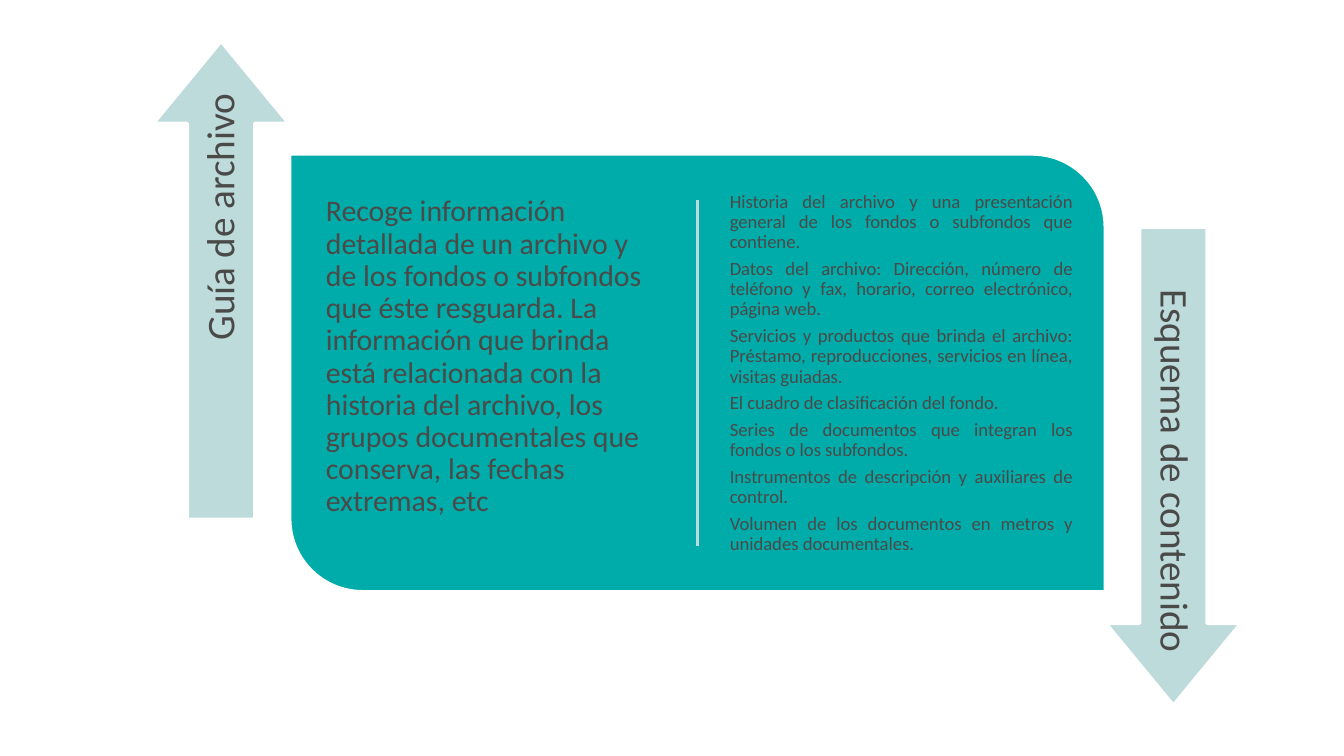
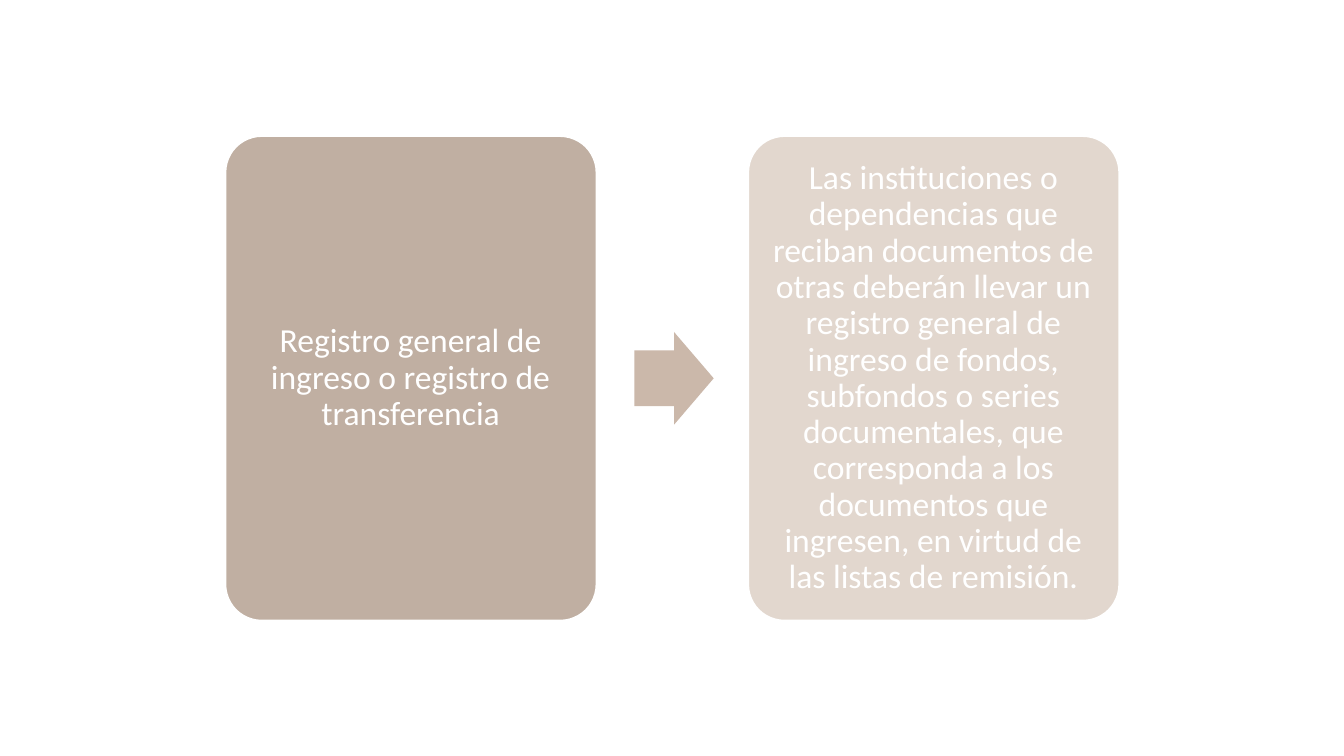
import pptx
import pptx.util
import pptx.dml.color
import pptx.enum.shapes
import pptx.enum.text
import lxml.etree

RGBColor = pptx.dml.color.RGBColor
SHAPE = pptx.enum.shapes.MSO_SHAPE
ALIGN = pptx.enum.text.PP_ALIGN
ANCHOR = pptx.enum.text.MSO_ANCHOR

# Shared style
PX = 4572  # 200 px to the inch
FONT = "Calibri"
WHITE = RGBColor(0xFF, 0xFF, 0xFF)
GRAY = RGBColor(0x4A, 0x4A, 0x49)
TEAL = RGBColor(0x00, 0xAC, 0xA9)
PALE_TEAL = RGBColor(0xBD, 0xDB, 0xDA)
TAUPE = RGBColor(0xC0, 0xAF, 0xA2)
ARROW_TAUPE = RGBColor(0xCB, 0xB8, 0xAA)
SAND = RGBColor(0xE2, 0xD7, 0xCE)

# Content
GUIDE = ("Recoge información detallada de un archivo y de los fondos o "
         "subfondos que éste resguarda. La información que brinda está "
         "relacionada con la historia del archivo, los grupos documentales "
         "que conserva, las fechas extremas, etc")
OUTLINE = [
    "Historia del archivo y una presentación general de los fondos o "
    "subfondos que contiene.",
    "Datos del archivo: Dirección, número de teléfono y fax, horario, "
    "correo electrónico, página web.",
    "Servicios y productos que brinda el archivo: Préstamo, reproducciones, "
    "servicios en línea, visitas guiadas.",
    "El cuadro de clasificación del fondo.",
    "Series de documentos que integran los fondos o los subfondos.",
    "Instrumentos de descripción y auxiliares de control.",
    "Volumen de los documentos en metros y unidades documentales.",
]
REGISTER = "Registro general de ingreso o registro de transferencia"
DUTY = ("Las instituciones o dependencias que reciban documentos de otras "
        "deberán llevar un registro general de ingreso de fondos, subfondos "
        "o series documentales, que corresponda a los documentos que "
        "ingresen, en virtud de las listas de remisión.")


def px(*lengths):
    return [pptx.util.Emu(n * PX) for n in lengths]


def add_block(s, kind, box, adjustments, fill, outlined=True, rotation=0):
    sp = s.shapes.add_shape(kind, *px(*box))
    sp.shadow.inherit = False
    for i, value in enumerate(adjustments):
        sp.adjustments[i] = value
    sp.fill.solid()
    sp.fill.fore_color.rgb = fill
    if outlined:
        sp.line.color.rgb = WHITE
        sp.line.width = pptx.util.Pt(2)
    else:
        sp.line.fill.background()
    sp.rotation = rotation


def add_text(s, box, paragraphs, size, color, inset, align=ALIGN.LEFT,
             anchor=ANCHOR.TOP, rotation=0):
    sp = s.shapes.add_textbox(*px(*box))
    sp.rotation = rotation
    tf = sp.text_frame
    tf.word_wrap = True
    tf.vertical_anchor = anchor
    tf.margin_left, tf.margin_top, tf.margin_right, tf.margin_bottom = px(*[inset] * 4)
    tf.text = "\n".join(paragraphs)
    for p in tf.paragraphs:
        p.alignment = align
        p.line_spacing = 0.9
        p.space_after = pptx.util.Pt(size * 0.35)
        for r in p.runs:
            r.font.name = FONT
            r.font.size = pptx.util.Pt(size)
            r.font.color.rgb = color


def add_divider(s, x, top, bottom):
    line = s.shapes.add_connector(pptx.enum.shapes.MSO_CONNECTOR.STRAIGHT,
                                  *px(x, top, x, bottom))
    line.line.color.rgb = PALE_TEAL
    line.line.width = pptx.util.Pt(2)
    lxml.etree.SubElement(line._element.spPr, pptx.oxml.ns.qn("a:effectLst"))


def add_side_arrow(s, arrow_at, label_at, label, rotation):
    add_block(s, SHAPE.RIGHT_ARROW, (*arrow_at, 712, 202), (0.498, 0.607),
              PALE_TEAL, rotation=rotation)
    add_text(s, (*label_at, 652, 100), [label], 21, GRAY, 18, ALIGN.RIGHT,
             ANCHOR.MIDDLE, rotation)


def add_card(s, left, fill, text):
    add_block(s, SHAPE.ROUNDED_RECTANGLE, (left, 201, 555, 724), (0.1,), fill)
    add_text(s, (left + 16, 217, 522, 692), [text], 18, WHITE, 14,
             ALIGN.CENTER, ANCHOR.MIDDLE)


def build_guide_slide(s):
    # Central panel with two columns
    add_block(s, SHAPE.ROUND_2_DIAG_RECTANGLE, (431, 229, 1214, 652),
              (0, 0.167), TEAL)
    add_divider(s, 1038, 298, 813)
    add_text(s, (471, 278, 526, 554), [GUIDE], 16, GRAY, 14)
    add_text(s, (1078, 278, 526, 554), OUTLINE, 10, GRAY, 8, ALIGN.JUSTIFY)
    # Vertical arrows on both sides
    add_side_arrow(s, (-27, 316), (4, 397), "Guía de archivo", 270)
    add_side_arrow(s, (1390, 593), (1420, 613), "Esquema de contenido", 90)


def build_register_slide(s):
    add_card(s, 334, TAUPE, REGISTER)
    add_block(s, SHAPE.RIGHT_ARROW, (944, 494, 118, 138), (0.6, 0.5),
              ARROW_TAUPE, outlined=False)
    add_card(s, 1112, SAND, DUTY)


def main():
    prs = pptx.Presentation()
    prs.slide_width, prs.slide_height = px(2000, 1125)
    for build in (build_guide_slide, build_register_slide):
        build(prs.slides.add_slide(prs.slide_layouts[6]))
    prs.save("out.pptx")


if __name__ == "__main__":
    main()
